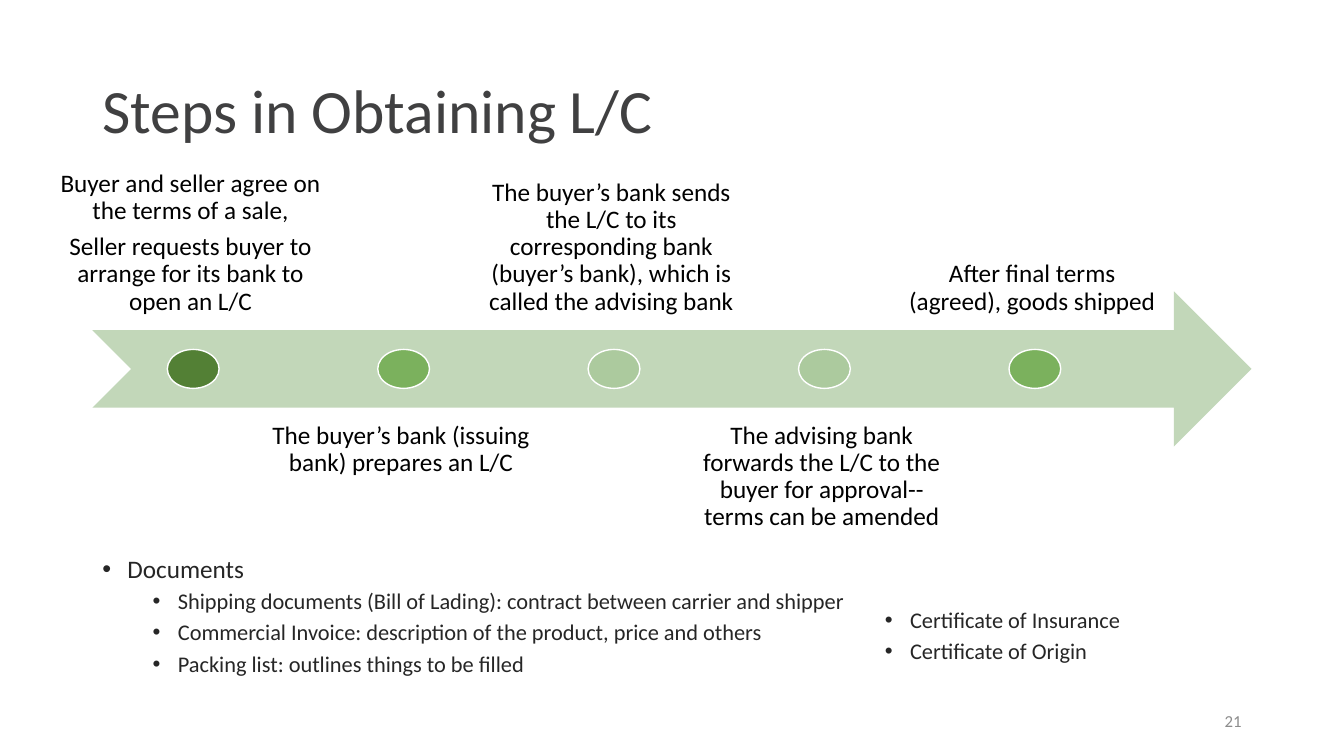
from dataclasses import dataclass

from lxml.etree import SubElement
from pptx import Presentation
from pptx.dml.color import RGBColor
from pptx.enum.shapes import MSO_SHAPE
from pptx.enum.text import MSO_ANCHOR, MSO_AUTO_SIZE, PP_ALIGN
from pptx.oxml.ns import qn
from pptx.util import Pt

FONT = "Calibri"
COLORS = {
    "title": "404041",
    "body": "262626",
    "step": "000000",
    "number": "8C8C8C",
    "arrow": "C2D7B9",
    "outline": "FFFFFF",
    "dark": "538035",
    "medium": "7BB15D",
    "pale": "ACCA9E",
}
STEP_PITCH = 150.3
STEP_LEFT, STEP_WIDTH, STEP_HEIGHT = 31.7, 208.8, 110.9
ABOVE_TOP, BELOW_TOP = 124.6, 291.6
DOT_LEFT, DOT_TOP, DOT_WIDTH, DOT_HEIGHT = 119.5, 249.6, 37, 27.8
STEP_INSET = 10.08


@dataclass(frozen=True)
class Line:
    text: str
    size: float
    level: int = 0
    indent: float = 0
    before: float = 0
    after: float = 0


@dataclass(frozen=True)
class Step:
    paragraphs: tuple[str, ...]
    dot: str


STEPS = (
    Step(("Buyer and seller agree on the terms of a sale,",
          "Seller requests buyer to arrange for its bank to open an L/C"), "dark"),
    Step(("The buyer’s bank (issuing bank) prepares an L/C",), "medium"),
    Step(("The buyer’s bank sends the L/C to its corresponding bank "
          "(buyer’s bank), which is called the advising bank",), "pale"),
    Step(("The advising bank forwards the L/C to the buyer for approval-- "
          "terms can be amended",), "pale"),
    Step(("After final terms (agreed), goods shipped",), "medium"),
)
DOCUMENTS = (
    "Shipping documents (Bill of Lading): contract between carrier and shipper",
    "Commercial Invoice: description of the product, price and others",
    "Packing list: outlines things to be filled",
)
CERTIFICATES = ("Certificate of Insurance", "Certificate of Origin")


def rgb(name: str) -> RGBColor:
    return RGBColor.from_string(COLORS[name])


def write_text(holder, lines: list[Line], *, color: str, align=PP_ALIGN.LEFT,
               anchor=MSO_ANCHOR.TOP, spacing: float = 0.9,
               inset: float | None = None, bullets: bool = False) -> None:
    frame = holder.text_frame
    frame.word_wrap = True
    frame.auto_size = MSO_AUTO_SIZE.NONE
    frame.vertical_anchor = anchor
    if inset is not None:
        frame.margin_left = frame.margin_right = Pt(inset)
        frame.margin_top = frame.margin_bottom = Pt(inset)
    for index, line in enumerate(lines):
        paragraph = frame.add_paragraph() if index else frame.paragraphs[0]
        if bullets:
            properties = paragraph._p.get_or_add_pPr()
            properties.set("marL", str(Pt(line.indent)))
            properties.set("indent", str(Pt(-18)))
            SubElement(properties, qn("a:buFont"), typeface="Arial")
            SubElement(properties, qn("a:buChar"), char="•")
        paragraph.level = line.level
        paragraph.alignment = align
        paragraph.line_spacing = spacing
        paragraph.space_before = Pt(line.before if index else 0)
        paragraph.space_after = Pt(line.after)
        run = paragraph.add_run()
        run.text = line.text
        run.font.name = FONT
        run.font.size = Pt(line.size)
        run.font.color.rgb = rgb(color)


def add_text(slide, left: float, top: float, width: float, height: float,
             lines: list[Line], **text_format) -> None:
    box = slide.shapes.add_textbox(Pt(left), Pt(top), Pt(width), Pt(height))
    write_text(box, lines, **text_format)


def add_filled(slide, preset, left: float, top: float, width: float,
               height: float, fill: str, outline: str | None = None) -> None:
    shape = slide.shapes.add_shape(preset, Pt(left), Pt(top), Pt(width), Pt(height))
    shape.shadow.inherit = False
    shape.fill.solid()
    shape.fill.fore_color.rgb = rgb(fill)
    if outline:
        shape.line.color.rgb = rgb(outline)
        shape.line.width = Pt(1)
    else:
        shape.line.fill.background()


def add_step(slide, index: int, step: Step) -> None:
    above = index % 2 == 0
    offset = index * STEP_PITCH
    last = len(step.paragraphs) - 1
    lines = [Line(text, 18, after=6.3 if number < last else 0)
             for number, text in enumerate(step.paragraphs)]
    add_text(slide, STEP_LEFT + offset, ABOVE_TOP if above else BELOW_TOP,
             STEP_WIDTH, STEP_HEIGHT, lines, color="step",
             align=PP_ALIGN.CENTER, inset=STEP_INSET,
             anchor=MSO_ANCHOR.BOTTOM if above else MSO_ANCHOR.TOP)
    add_filled(slide, MSO_SHAPE.OVAL, DOT_LEFT + offset, DOT_TOP,
               DOT_WIDTH, DOT_HEIGHT, step.dot, "outline")


def sub_items(texts: tuple[str, ...]) -> list[Line]:
    return [Line(text, 16, level=1, indent=54, before=5) for text in texts]


def main() -> None:
    presentation = Presentation()
    presentation.slide_width, presentation.slide_height = Pt(960), Pt(540)
    slide = presentation.slides.add_slide(presentation.slide_layouts[5])

    title = slide.shapes.title
    title.left, title.top = Pt(66), Pt(28.8)
    title.width, title.height = Pt(828), Pt(104.4)
    write_text(title, [Line("Steps in Obtaining L/C", 44)], color="title",
               anchor=MSO_ANCHOR.MIDDLE)

    add_text(slide, 66, 393.8, 556, 80,
             [Line("Documents", 18, indent=18), *sub_items(DOCUMENTS)],
             color="body", bullets=True)
    add_text(slide, 894 - 216, 500.5, 216, 28.8, [Line("21", 12)], color="number",
             align=PP_ALIGN.RIGHT, anchor=MSO_ANCHOR.MIDDLE, spacing=1.0)

    add_filled(slide, MSO_SHAPE.NOTCHED_RIGHT_ARROW, 66, 208.1, 828, 110.9, "arrow")
    for index, step in enumerate(STEPS):
        add_step(slide, index, step)

    add_text(slide, 589, 431.3, 360, 80, sub_items(CERTIFICATES),
             color="body", bullets=True)
    presentation.save("out.pptx")


if __name__ == "__main__":
    main()
